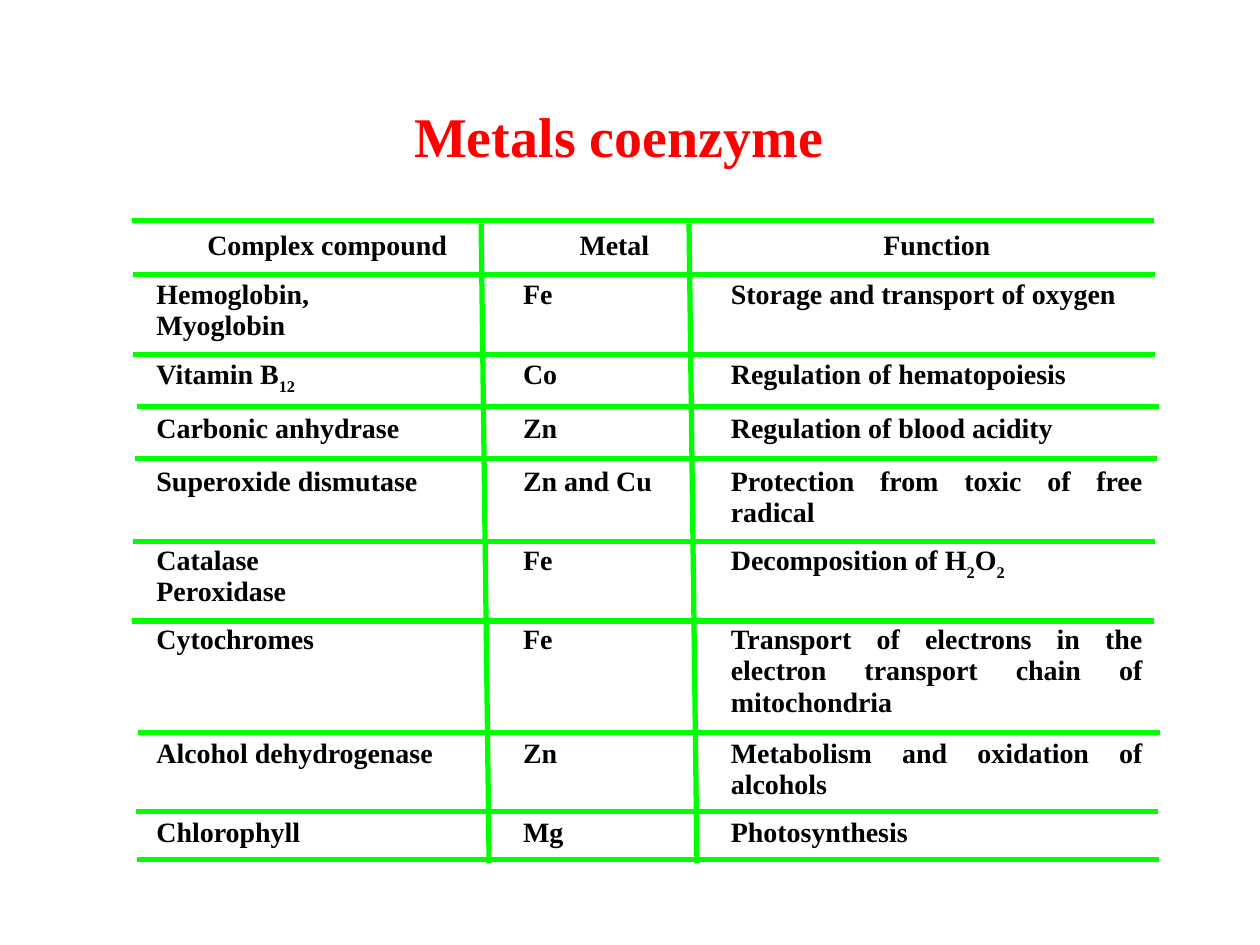
from lxml import etree
from pptx import Presentation
from pptx import util as u
from pptx.dml.color import RGBColor
from pptx.enum import shapes, text
from pptx.oxml.ns import qn

RED = RGBColor(0xFF, 0x00, 0x00)
GREEN = RGBColor(0x00, 0xFF, 0x00)
BLACK = RGBColor(0x00, 0x00, 0x00)

COLUMN_WIDTHS = [7.39, 4.19, 8.81]
ROW_HEIGHTS = [0.99, 1.6, 1.09, 1.07, 1.6, 1.6, 2.29, 1.6, 0.94]
COENZYMES = [
    ("Complex compound", "Metal", "Function"),
    ("Hemoglobin,\nMyoglobin", "Fe", "Storage and transport of oxygen"),
    ("Vitamin B_12", "Co", "Regulation of hematopoiesis"),
    ("Carbonic anhydrase", "Zn", "Regulation of blood acidity"),
    ("Superoxide dismutase", "Zn and Cu", "Protection from toxic of free radical"),
    ("Catalase\nPeroxidase", "Fe", "Decomposition of H_2_O_2"),
    ("Cytochromes", "Fe",
     "Transport of electrons in the electron transport chain of mitochondria"),
    ("Alcohol dehydrogenase", "Zn", "Metabolism and oxidation of alcohols"),
    ("Chlorophyll", "Mg", "Photosynthesis"),
]
RULE_LENGTH = 20.6
RULE_STARTS = [
    (2.67, 4.45), (2.69, 5.54), (2.69, 7.14), (2.77, 8.2), (2.72, 9.25),
    (2.69, 10.92), (2.67, 12.52), (2.79, 14.76), (2.74, 16.36), (2.77, 17.32),
]
DIVIDER_TOPS = [9.7, 13.89]
DIVIDER_SLANT = 0.16


class SlideBuilder:
    font_name = "Times New Roman"
    line_width = u.Pt(3)

    def __init__(self, slide):
        self.slide = slide

    def style(self, para, size, color, align):
        para.alignment = align
        para.font.name = self.font_name
        para.font.size = u.Pt(size)
        para.font.bold = True
        para.font.color.rgb = color

    def fill_text(self, frame, content, size, color, align):
        for number, line in enumerate(content.split("\n")):
            para = frame.add_paragraph() if number else frame.paragraphs[0]
            self.style(para, size, color, align)
            for index, piece in enumerate(line.split("_")):
                span = para.add_run()
                span.text = piece
                if index % 2:
                    span.font._element.set("baseline", "-30000")

    def title(self, content, left, top, width, height):
        box = self.slide.shapes.add_textbox(
            u.Cm(left), u.Cm(top), u.Cm(width), u.Cm(height))
        box.text_frame.word_wrap = True
        self.fill_text(box.text_frame, content, 32, RED, text.PP_ALIGN.LEFT)

    def table(self, rows, left, top):
        table = self.slide.shapes.add_table(
            len(rows), len(COLUMN_WIDTHS), u.Cm(left), u.Cm(top),
            u.Cm(sum(COLUMN_WIDTHS)), u.Cm(sum(ROW_HEIGHTS))).table
        table.horz_banding = False
        for column, width in zip(table.columns, COLUMN_WIDTHS):
            column.width = u.Cm(width)
        for row, height, contents in zip(table.rows, ROW_HEIGHTS, rows):
            row.height = u.Cm(height)
            header = contents is rows[0]
            align = text.PP_ALIGN.CENTER if header else text.PP_ALIGN.JUSTIFY
            for cell, content in zip(row.cells, contents):
                cell.fill.background()
                self.fill_text(cell.text_frame, content, 16, BLACK, align)

    def line(self, x1, y1, x2, y2):
        line = self.slide.shapes.add_connector(
            shapes.MSO_CONNECTOR.STRAIGHT,
            u.Cm(x1), u.Cm(y1), u.Cm(x2), u.Cm(y2))
        line.line.color.rgb = GREEN
        line.line.width = self.line_width
        etree.SubElement(line._element.spPr, qn("a:effectLst"))


def main():
    deck = Presentation()
    deck.slide_width = u.Cm(25.4)
    deck.slide_height = u.Cm(19.05)
    builder = SlideBuilder(deck.slides.add_slide(deck.slide_layouts[6]))
    builder.table(COENZYMES, 2.9, 4.52)
    for left, top in RULE_STARTS:
        builder.line(left, top, left + RULE_LENGTH, top)
    for left in DIVIDER_TOPS:
        builder.line(left, 4.52, left + DIVIDER_SLANT, 17.4)
    builder.title("Metals coenzyme", 8.1, 1.93, 10.39, 1.63)
    deck.save("out.pptx")


if __name__ == "__main__":
    main()
